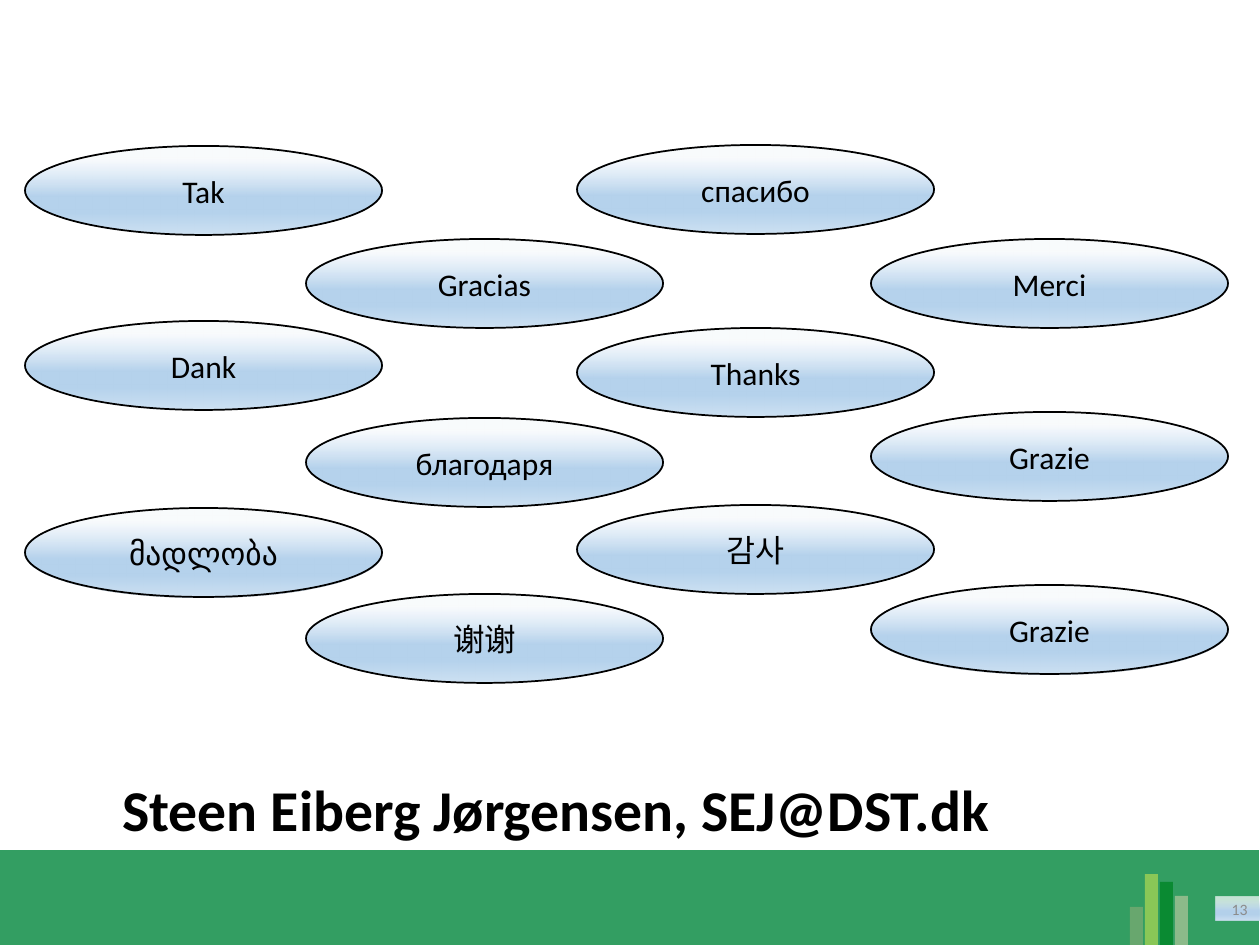
from dataclasses import dataclass
from lxml.etree import SubElement
from pptx import Presentation
from pptx.dml.color import RGBColor
from pptx.enum.shapes import MSO_SHAPE
from pptx.enum.text import MSO_ANCHOR, PP_ALIGN
from pptx.oxml.ns import qn
from pptx.util import Pt


@dataclass(frozen=True)
class Theme:
    font: str = "Calibri"
    ink: str = "000000"
    grey: str = "8C8C8C"
    band: str = "00863B"
    title: int = 33
    word: int = 18
    note: int = 9
    # position %, colour, opacity %
    glow: tuple = ((15, "F7FAFD", 75), (57, "B5D2EC", 100),
                   (75, "B5D2EC", 100), (100, "CEE1F2", 100))


THEME = Theme()
PX = 914400 / 126
WIDE, HIGH = 1260, 945
OVAL = (357, 89)

TITLE = "Steen Eiberg Jørgensen, SEJ@DST.dk"
PAGE = "13"
# column left: (top, word) pairs
WORDS = {
    25: ((146, "Tak"), (321, "Dank"), (508, "მადლობა")),
    306: ((239, "Gracias"), (418, "благодаря"), (594, "谢谢")),
    577: ((145, "спасибо"), (328, "Thanks"), (505, "감사")),
    871: ((239, "Merci"), (412, "Grazie"), (585, "Grazie")),
}
# height, colour
BARS = ((38, "76AA71"), (71, "A0D255"), (63, "008627"), (49, "A3C195"))


def emu(*sizes):
    return [round(size * PX) for size in sizes]


def add_shape(slide, kind, box):
    shape = slide.shapes.add_shape(kind, *emu(*box))
    shape.shadow.inherit = False
    shape.line.fill.background()
    return shape


def set_alpha(node, share):
    SubElement(node, qn("a:alpha"), val=str(share * 1000))


def fill_flat(shape, color):
    """Fill with a colour at 80 % opacity."""
    shape.fill.solid()
    shape.fill.fore_color.rgb = RGBColor.from_string(color)
    set_alpha(shape.fill._xPr.find(".//" + qn("a:srgbClr")), 80)


def fill_glow(shape):
    """Fill with the vertical gradient of the theme."""
    shape.fill.gradient()
    shape.fill.gradient_angle = 270
    stops = shape.fill._xPr.find(".//" + qn("a:gsLst"))
    for stop in list(stops):
        stops.remove(stop)
    for place, color, share in THEME.glow:
        stop = SubElement(stops, qn("a:gs"), pos=str(place * 1000))
        node = SubElement(stop, qn("a:srgbClr"), val=color)
        if share < 100:
            set_alpha(node, share)


def write(shape, text, size, color, align, bold=False):
    frame = shape.text_frame
    frame.word_wrap = True
    frame.vertical_anchor = MSO_ANCHOR.MIDDLE
    para = frame.paragraphs[0]
    para.alignment = align
    run = para.add_run()
    run.text = text
    run.font.name = THEME.font
    run.font.size = Pt(size)
    run.font.bold = bold
    run.font.color.rgb = RGBColor.from_string(color)
    return frame


def draw_band(slide):
    fill_flat(add_shape(slide, MSO_SHAPE.RECTANGLE, (-1, 850, WIDE, 95)), THEME.band)
    for i, (high, color) in enumerate(BARS):
        box = (1130 + 15 * i, HIGH - high, 13, high)
        fill_flat(add_shape(slide, MSO_SHAPE.RECTANGLE, box), color)


def draw_title(slide):
    box = slide.shapes.add_textbox(*emu(110, 766, 1131, 157))
    frame = write(box, TITLE, THEME.title, THEME.ink, PP_ALIGN.LEFT, True)
    frame.vertical_anchor = MSO_ANCHOR.TOP
    frame.margin_top = emu(16)[0]
    frame.paragraphs[0].line_spacing = 0.9


def draw_page(slide):
    box = add_shape(slide, MSO_SHAPE.RECTANGLE, (1216, 897, 44, 24))
    fill_glow(box)
    write(box, PAGE, THEME.note, THEME.grey, PP_ALIGN.RIGHT)


def draw_words(slide):
    for left, column in WORDS.items():
        for top, word in column:
            oval = add_shape(slide, MSO_SHAPE.OVAL, (left, top, *OVAL))
            fill_glow(oval)
            oval.line.color.rgb = RGBColor.from_string(THEME.ink)
            oval.line.width = Pt(1)
            write(oval, word, THEME.word, THEME.ink, PP_ALIGN.CENTER)


def main():
    deck = Presentation()
    deck.slide_width, deck.slide_height = emu(WIDE, HIGH)
    slide = deck.slides.add_slide(deck.slide_layouts[6])
    draw_band(slide)
    draw_title(slide)
    draw_page(slide)
    draw_words(slide)
    deck.save("out.pptx")


if __name__ == "__main__":
    main()
